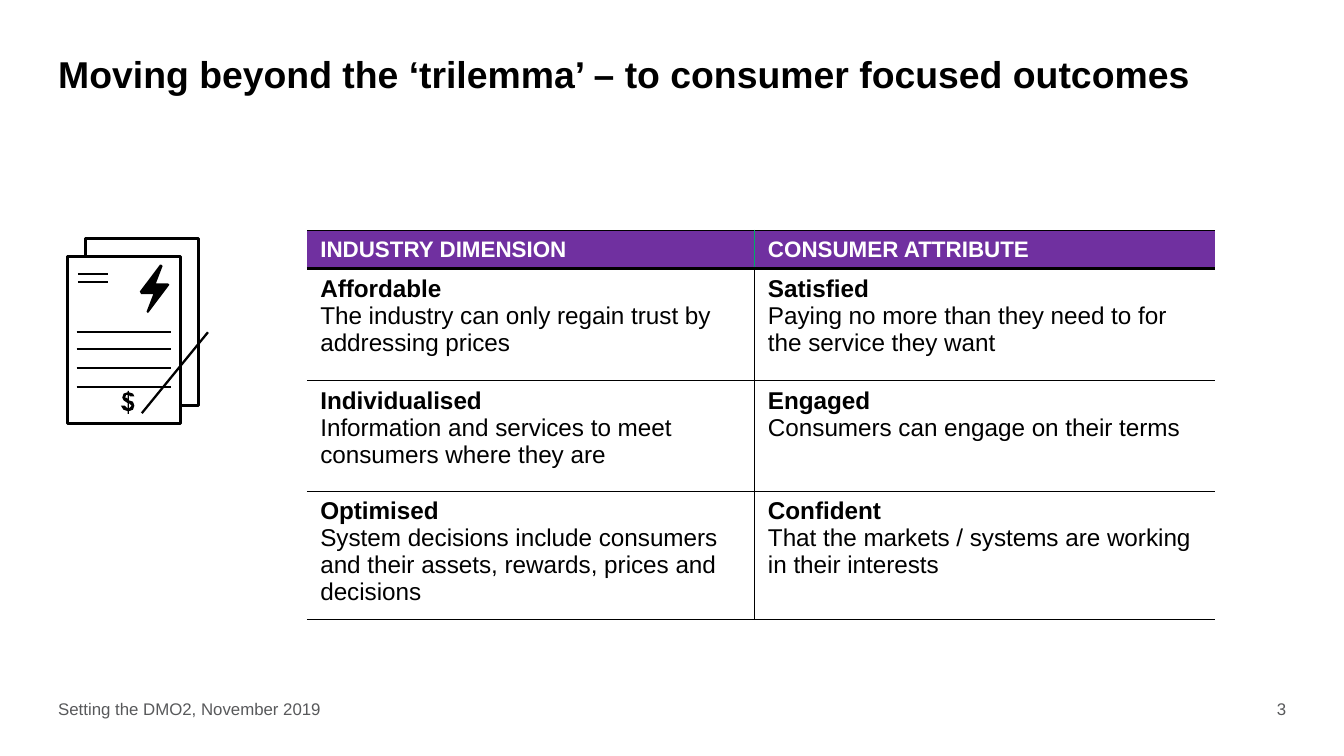
"""Build the slide on consumer focused outcomes with its bill icon and table."""
from lxml.etree import SubElement
from pptx import Presentation
from pptx.dml.color import RGBColor
from pptx.enum.shapes import MSO_CONNECTOR as Connector, MSO_SHAPE as Shape
from pptx.enum.text import MSO_ANCHOR as Anchor, PP_ALIGN as Align
from pptx.oxml.ns import qn
from pptx.util import Cm, Pt


def color(value):
    return RGBColor.from_string(value)


def add_run(paragraph, text, size, value, bold=False):
    run = paragraph.add_run()
    run.text = text
    run.font.name = "Arial"
    run.font.size = Pt(size)
    run.font.bold = bold
    run.font.color.rgb = color(value)


presentation = Presentation()
presentation.slide_width = Cm(25.4)
presentation.slide_height = Cm(14.29)
slide = presentation.slides.add_slide(presentation.slide_layouts[6])

title = "Moving beyond the ‘trilemma’ – to consumer focused outcomes"
footer = "Setting the DMO2, November 2019"
for text, left, top, width, height, size, value, bold, anchor, align in [
    (title, 1.1, 1.1, 23.2, 0.76, 20, "000000", True, Anchor.TOP, Align.LEFT),
    (footer, 1.1, 13.14, 15, 0.5, 9, "58595B", False, Anchor.MIDDLE, Align.LEFT),
    ("3", 23.07, 13.14, 1.24, 0.5, 9, "58595B", False, Anchor.MIDDLE, Align.RIGHT),
]:
    box = slide.shapes.add_textbox(Cm(left), Cm(top), Cm(width), Cm(height))
    frame = box.text_frame
    frame.word_wrap = True
    frame.margin_left = frame.margin_right = frame.margin_top = frame.margin_bottom = 0
    frame.vertical_anchor = anchor
    paragraph = frame.paragraphs[0]
    paragraph.alignment = align
    if text == title:
        paragraph.line_spacing = Pt(20)
    add_run(paragraph, text, size, value, bold)

rows = [
    [("INDUSTRY DIMENSION",), ("CONSUMER ATTRIBUTE",)],
    [("Affordable", "The industry can only regain trust by addressing prices"),
     ("Satisfied", "Paying no more than they need to for the service they want")],
    [("Individualised", "Information and services to meet consumers where they are"),
     ("Engaged", "Consumers can engage on their terms")],
    [("Optimised", "System decisions include consumers and their assets, rewards, prices and decisions"),
     ("Confident", "That the markets / systems are working in their interests")],
]
column_widths = [8.46, 8.7]
row_heights = [0.72, 2.11, 2.09, 2.41]
table = slide.shapes.add_table(
    len(rows), 2, Cm(5.8), Cm(4.35), Cm(sum(column_widths)), Cm(sum(row_heights))
).table
table.first_row = table.horz_banding = False
for column, width in zip(table.columns, column_widths):
    column.width = Cm(width)
for row_index, row in enumerate(rows):
    table.rows[row_index].height = Cm(row_heights[row_index])
    header = row_index == 0
    divider = ("00AB69" if header else "000000", 0.25)
    top_line = ("000000", {0: 0.5, 1: 1.5}.get(row_index, 0.25))
    bottom_line = ("000000", 1.5 if header else 0.25)
    for column_index, texts in enumerate(row):
        cell = table.cell(row_index, column_index)
        cell.margin_top = Cm(0.13)
        cell.margin_bottom = Cm(0.09)
        properties = cell._tc.get_or_add_tcPr()
        sides = [("a:lnL", divider if column_index else None),
                 ("a:lnR", None if column_index else divider),
                 ("a:lnT", top_line), ("a:lnB", bottom_line)]
        for tag, border in sides:
            line = SubElement(properties, qn(tag))
            if border:
                line.set("w", str(Pt(border[1])))
                fill = SubElement(line, qn("a:solidFill"))
                SubElement(fill, qn("a:srgbClr")).set("val", border[0])
            else:
                SubElement(line, qn("a:noFill"))
        cell.fill.solid()
        cell.fill.fore_color.rgb = color("7030A0" if header else "FFFFFF")
        for index, text in enumerate(texts):
            frame = cell.text_frame
            paragraph = frame.add_paragraph() if index else frame.paragraphs[0]
            add_run(paragraph, text, 12 if header else 13,
                    "FFFFFF" if header else "000000", index == 0)

icon = slide.shapes.add_group_shape()
for left, top in [(1.62, 4.51), (1.27, 4.85)]:
    page = icon.shapes.add_shape(Shape.RECTANGLE, Cm(left), Cm(top), Cm(2.14), Cm(3.16))
    page.shadow.inherit = False
    page.fill.solid()
    page.fill.fore_color.rgb = color("FFFFFF")
    page.line.color.rgb = color("000000")
    page.line.width = Pt(1.6)

pen = icon.shapes.add_connector(Connector.STRAIGHT, Cm(2.68), Cm(7.81), Cm(3.93), Cm(6.28))
pen.line.color.rgb = color("000000")
pen.line.width = Pt(1.22)
SubElement(pen._element.spPr, qn("a:effectLst"))

bill_lines = [[(57, y), (127, y)] for y in (247, 260, 274, 288)]
heading_lines = [[(58, y), (80, y)] for y in (204, 210)]
bolt = [[(110, 233), (109, 232), (114, 219), (105, 219), (104, 217), (119, 197),
         (120, 197), (121, 198), (116, 211), (125, 211), (126, 212), (111, 232)]]
dollar = [
    [(95, 304), (95, 300), (92, 298), (91, 296), (92, 293), (95, 292), (95, 291),
     (96, 291), (96, 292), (99, 293), (100, 295), (97, 295), (96, 294), (96, 298),
     (99, 299), (100, 302), (99, 305), (96, 306), (96, 308), (95, 308), (95, 306),
     (92, 305), (90, 302), (93, 302), (94, 303)],
    [(95, 294), (94, 294), (93, 296), (94, 296), (95, 297)],
    [(96, 304), (97, 303), (98, 302), (97, 301), (96, 300)],
]
for outlines, filled in [(bill_lines, False), (bolt, True),
                         (heading_lines, False), (dollar, True)]:
    builder = icon.shapes.build_freeform(*outlines[0][0], scale=Cm(2.54) / 100)
    for index, outline in enumerate(outlines):
        if index:
            builder.move_to(*outline[0])
        builder.add_line_segments(outline[1:], close=filled)
    symbol = builder.convert_to_shape()
    symbol.shadow.inherit = False
    if filled:
        symbol.fill.solid()
        symbol.fill.fore_color.rgb = color("000000")
        symbol.line.fill.background()
    else:
        symbol.fill.background()
        symbol.line.color.rgb = color("000000")
        symbol.line.width = Pt(1.17)

presentation.save("out.pptx")
